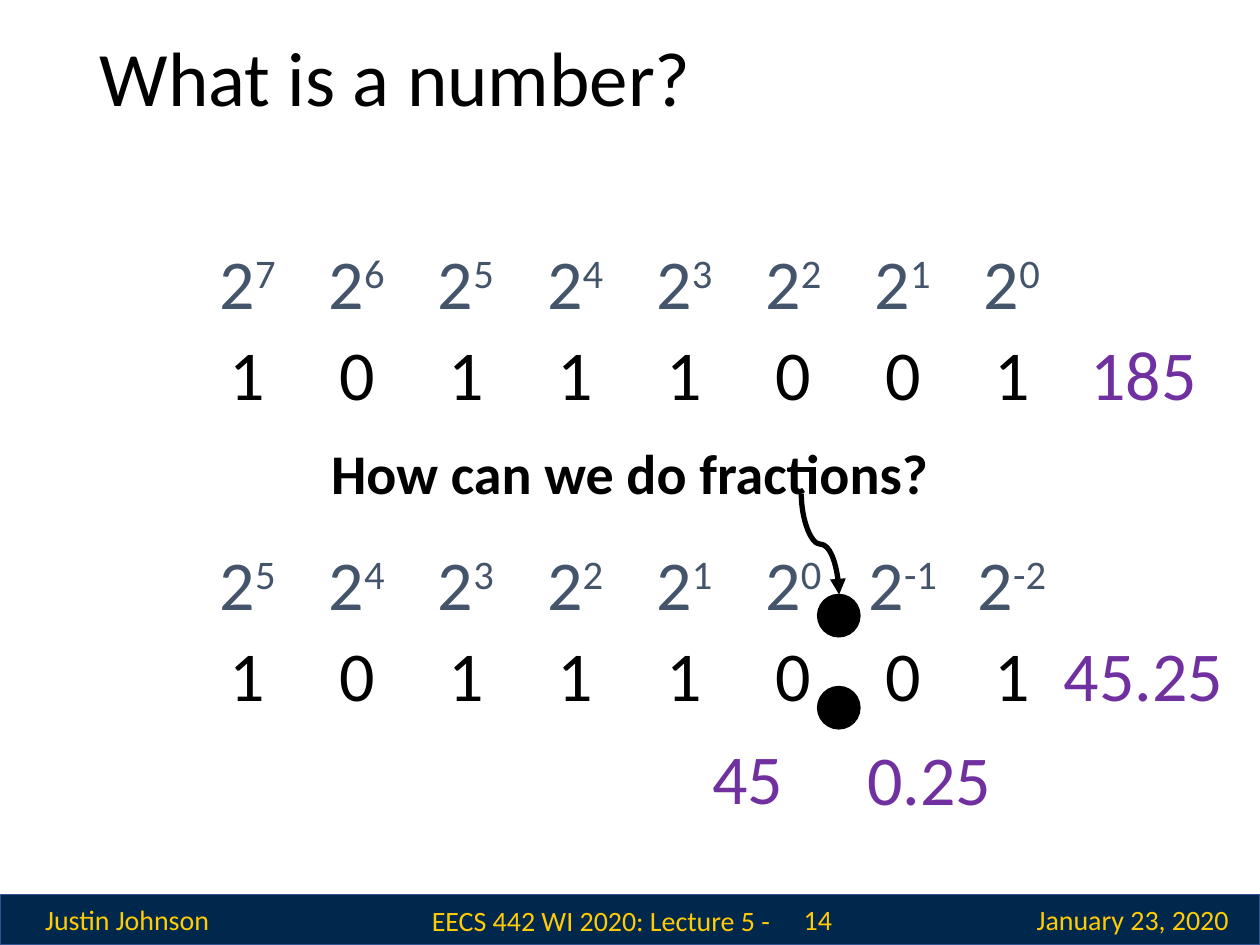
import pptx
import pptx.util
import pptx.dml.color
import pptx.enum.shapes
import pptx.enum.text
import pptx.oxml.ns
import lxml.etree

Pt = pptx.util.Pt
RGB = pptx.dml.color.RGBColor
SHAPE = pptx.enum.shapes.MSO_SHAPE
ALIGN = pptx.enum.text.PP_ALIGN
MIDDLE = pptx.enum.text.MSO_ANCHOR.MIDDLE
FIT = pptx.enum.text.MSO_AUTO_SIZE.SHAPE_TO_FIT_TEXT

BLACK = RGB(0x00, 0x00, 0x00)
SLATE = RGB(0x44, 0x54, 0x6A)
PURPLE = RGB(0x70, 0x30, 0xA0)
NAVY = RGB(0x00, 0x27, 0x4C)
EDGE = RGB(0x32, 0x54, 0x91)
MAIZE = RGB(0xFF, 0xCB, 0x05)

TITLE = {"name": "Calibri", "size": Pt(44), "color": BLACK}
ASK = {"name": "Calibri", "size": Pt(32), "color": BLACK, "bold": True}
FOOT = {"name": "Calibri", "size": Pt(16), "color": MAIZE}
DIGIT = {"name": "Calibri", "size": Pt(40), "color": BLACK}
POWER = {**DIGIT, "color": SLATE}
VALUE = {**DIGIT, "color": PURPLE}

LEFT, STEP, CELL, HIGH = 108.7, 62.4, 65.5, 55.5
DROP = 51.9  # from the row of powers to the row of bits
BITS = "10111001"
TOP, LOW = 133.2, 305.3


def set_font(font, style):
    for key, value in style.items():
        if key == "color":
            font.color.rgb = value
        else:
            setattr(font, key, value)


def add_run(para, text, style):
    run = para.add_run()
    run.text = text
    set_font(run.font, style)
    return run


def add_text(slide, box, text, style, power=None, **frame_style):
    """Add centred text, with an optional raised exponent."""
    frame = slide.shapes.add_textbox(*map(Pt, box)).text_frame
    settings = {"word_wrap": True, "auto_size": FIT, **frame_style}
    for key, value in settings.items():
        setattr(frame, key, value)
    para = frame.paragraphs[0]
    para.alignment = ALIGN.CENTER
    add_run(para, text, style)
    if power is not None:
        run = add_run(para, str(power), style)
        run.font._element.set("baseline", "30000")


def add_solid(slide, kind, box, fill, line):
    shape = slide.shapes.add_shape(kind, *map(Pt, box))
    shape.shadow.inherit = False
    shape.fill.solid()
    shape.fill.fore_color.rgb = fill
    shape.line.color.rgb = line
    shape.line.width = Pt(1)


def add_point(slide, left, top):
    add_solid(slide, SHAPE.OVAL, (left, top, 24, 24), BLACK, BLACK)


def add_arrow(slide, start, end):
    """Add a curved arrow that leaves and arrives vertically."""
    mid_x, mid_y = (start[0] + end[0]) / 2, (start[1] + end[1]) / 2
    half_x, half_y = (end[0] - start[0]) / 2, (end[1] - start[1]) / 2
    # Laid on its side here, then turned by 270 degrees.
    ends = (mid_x + half_y, mid_y - half_x, mid_x - half_y, mid_y + half_x)
    curve = slide.shapes.add_connector(
        pptx.enum.shapes.MSO_CONNECTOR.CURVE, *map(Pt, ends))
    curve.line.color.rgb = BLACK
    curve.line.width = Pt(3)
    qn = pptx.oxml.ns.qn
    props = curve._element.spPr
    props.find(qn("a:xfrm")).set("rot", str(270 * 60000))
    line = props.find(qn("a:ln"))
    lxml.etree.SubElement(line, qn("a:tailEnd"), type="triangle")
    lxml.etree.SubElement(props, qn("a:effectLst"))


def add_number(slide, top, first):
    """Add the bits of a number below powers of two that fall from first."""
    for col, bit in enumerate(BITS):
        left = LEFT + col * STEP
        add_text(slide, (left, top, CELL, HIGH), "2", POWER, first - col)
        add_text(slide, (left, top + DROP, CELL, HIGH), bit, DIGIT)


def add_footer(slide):
    add_solid(slide, SHAPE.RECTANGLE, (0, 511.2, 720, 28.8), NAVY, EDGE)
    notes = [
        ((0.7, 511.2, 144, 28.8), "Justin Johnson", {}),
        ((575.3, 512, 144, 26.6), "January 23, 2020", {}),
        ((237.6, 512.6, 215.3, 26.6), "EECS 442 WI 2020: Lecture 5 - ", {}),
        ((432, 511.2, 63.4, 28.8), "14", {"margin_left": Pt(14.4)}),
    ]
    for box, text, extra in notes:
        add_text(slide, box, text, FOOT, vertical_anchor=MIDDLE, **extra)


def set_title(slide, text):
    title = slide.shapes.title
    box = {"left": 49.7, "top": 14.4, "width": 620.6, "height": 64.8}
    for key, value in box.items():
        setattr(title, key, Pt(value))
    title.text_frame.vertical_anchor = MIDDLE
    para = title.text_frame.paragraphs[0]
    para.alignment = ALIGN.LEFT
    para.line_spacing = 0.9
    add_run(para, text, TITLE)


def main():
    deck = pptx.Presentation()
    deck.slide_width, deck.slide_height = Pt(720), Pt(540)
    slide = deck.slides.add_slide(deck.slide_layouts[5])
    add_footer(slide)
    set_title(slide, "What is a number?")
    add_number(slide, TOP, 7)
    add_text(slide, (30.2, 247, 659.5, 46), "How can we do fractions?", ASK)
    add_number(slide, LOW, 5)
    values = [
        ((611.3, TOP + DROP, 84.2, HIGH), "185"),
        ((591.1, LOW + DROP, 124.6, HIGH), "45.25"),
        ((375.8, 416.2, 103, HIGH), "45"),
        ((479.5, 416.9, 103, HIGH), "0.25"),
    ]
    for box, text in values:
        add_text(slide, box, text, VALUE)
    add_point(slide, 467.3, 339.8)
    add_point(slide, 467.3, 392.4)
    add_arrow(slide, (457.9, 282.2), (479.5, 339.8))
    deck.save("out.pptx")


if __name__ == "__main__":
    main()
